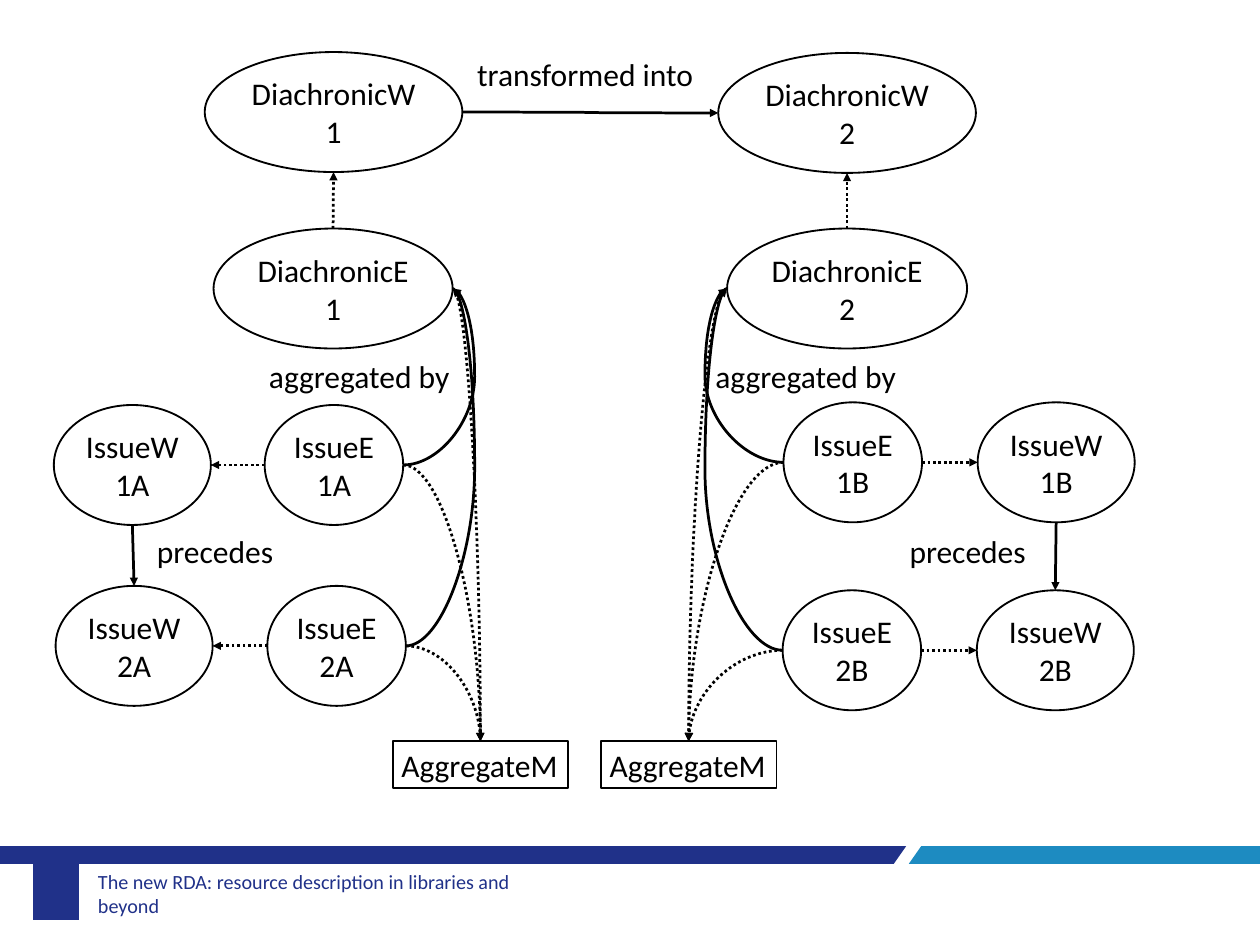
"""Build the slide relating diachronic works, their issues and aggregates."""
import dataclasses
import typing

import lxml.etree
import pptx
import pptx.dml.color
import pptx.enum.dml
import pptx.enum.shapes
import pptx.enum.text
import pptx.oxml.ns
import pptx.util

Inches = pptx.util.Inches
Shape = pptx.enum.shapes.MSO_SHAPE
Connector = pptx.enum.shapes.MSO_CONNECTOR
Align = pptx.enum.text.PP_ALIGN
Point = tuple[float, float]

BLACK = pptx.dml.color.RGBColor(0x00, 0x00, 0x00)
NAVY = pptx.dml.color.RGBColor(0x20, 0x31, 0x89)
SKY = pptx.dml.color.RGBColor(0x1D, 0x8B, 0xC1)
FONT = "Calibri"


@dataclasses.dataclass(frozen=True)
class Node:
    text: str
    left: float
    top: float
    width: float
    height: float = 1.36
    form: Shape = Shape.OVAL

    def side(self, across: float, down: float) -> Point:
        return self.left + across * self.width, self.top + down * self.height

    @property
    def west(self) -> Point:
        return self.side(0, 0.5)

    @property
    def east(self) -> Point:
        return self.side(1, 0.5)

    @property
    def north(self) -> Point:
        return self.side(0.5, 0)

    @property
    def south(self) -> Point:
        return self.side(0.5, 1)


@dataclasses.dataclass(frozen=True)
class Arrow:
    start: Point
    end: Point
    dotted: bool = False
    kind: Connector = Connector.CURVE
    corner: bool = False
    bulge: typing.Optional[float] = None


@dataclasses.dataclass(frozen=True)
class Half:
    work: Node
    expression: Node
    issue_works: tuple[Node, Node]
    issue_expressions: tuple[Node, Node]
    aggregate: Node
    bulge: float
    mirrored: bool

    def nodes(self) -> list[Node]:
        return [self.work, self.expression, *self.issue_works, *self.issue_expressions, self.aggregate]

    def arrows(self) -> list[Arrow]:
        inner = self.expression.west if self.mirrored else self.expression.east
        first, second = self.issue_works
        result = [
            Arrow(self.expression.north, self.work.south, dotted=True, kind=Connector.STRAIGHT),
            Arrow(first.south, second.north, kind=Connector.STRAIGHT),
            Arrow(inner, self.aggregate.north, dotted=True, corner=True),
        ]
        for issue, work in zip(self.issue_expressions, self.issue_works):
            near, far, target = issue.east, issue.west, work.east
            if self.mirrored:
                near, far, target = issue.west, issue.east, work.west
            result += [
                Arrow(far, target, dotted=True),
                Arrow(near, inner, bulge=self.bulge),
                Arrow(near, self.aggregate.north, dotted=True, corner=True),
            ]
        return result


LEFT = Half(
    Node("DiachronicW\n1", 2.32, 0.59, 2.92),
    Node("DiachronicE\n1", 2.42, 2.59, 2.71),
    (Node("IssueW\n1A", 0.61, 4.59, 1.78), Node("IssueW\n2A", 0.63, 6.64, 1.78)),
    (Node("IssueE\n1A", 3, 4.59, 1.57), Node("IssueE\n2A", 3.03, 6.64, 1.57)),
    Node("AggregateM", 4.45, 8.4, 1.99, 0.53, Shape.RECTANGLE),
    bulge=5.38,
    mirrored=False,
)
RIGHT = Half(
    Node("DiachronicW\n2", 8.14, 0.6, 2.92),
    Node("DiachronicE\n2", 8.24, 2.59, 2.72),
    (Node("IssueW\n1B", 11.08, 4.56, 1.78), Node("IssueW\n2B", 11.07, 6.69, 1.78)),
    (Node("IssueE\n1B", 8.88, 4.56, 1.57), Node("IssueE\n2B", 8.87, 6.69, 1.57)),
    Node("AggregateM", 6.81, 8.4, 1.99, 0.53, Shape.RECTANGLE),
    bulge=7.99,
    mirrored=True,
)
LABELS = [
    ("transformed into", 5.31, 0.57, 2.69),
    ("precedes", 1.68, 5.98, 1.54),
    ("precedes", 10.21, 5.98, 1.54),
    ("aggregated by", 2.95, 4, 2.28),
    ("aggregated by", 8.01, 4, 2.28),
]
BANDS = [
    (NAVY, [(0, 9.59), (10.27, 9.59), (10.13, 9.79), (0, 9.79)]),
    (SKY, [(10.44, 9.59), (14.28, 9.59), (14.28, 9.79), (10.3, 9.79)]),
    (NAVY, [(0.37, 9.59), (0.89, 9.59), (0.89, 10.43), (0.37, 10.43)]),
]


def write(box, text: str, *, size: float = 25.7, color=BLACK, align=Align.LEFT, wrap: bool = False) -> None:
    frame = box.text_frame
    frame.word_wrap = wrap
    frame.vertical_anchor = pptx.enum.text.MSO_ANCHOR.MIDDLE
    frame.text = text
    for para in frame.paragraphs:
        para.alignment = align
        para.font.size = pptx.util.Pt(size)
        para.font.name = FONT
        para.font.color.rgb = color


def draw_band(page, color, corners: list[Point]) -> None:
    start, *others = [(Inches(x), Inches(y)) for x, y in corners]
    builder = page.shapes.build_freeform(*start)
    builder.add_line_segments(others, close=True)
    band = builder.convert_to_shape()
    band.shadow.inherit = False
    band.fill.solid()
    band.fill.fore_color.rgb = color
    band.line.fill.background()


def draw_node(page, node: Node) -> None:
    place = map(Inches, (node.left, node.top, node.width, node.height))
    shape = page.shapes.add_shape(node.form, *place)
    shape.shadow.inherit = False
    shape.fill.background()
    shape.line.color.rgb = BLACK
    shape.line.width = pptx.util.Pt(1.5)
    write(shape, node.text, align=Align.CENTER if node.form == Shape.OVAL else Align.LEFT)


def draw_arrow(page, arrow: Arrow) -> None:
    qn = pptx.oxml.ns.qn
    connector = page.shapes.add_connector(arrow.kind, *map(Inches, arrow.start + arrow.end))
    line = connector.line
    line.color.rgb = BLACK
    line.width = pptx.util.Pt(2.25)
    if arrow.dotted:
        line.dash_style = pptx.enum.dml.MSO_LINE.ROUND_DOT
    properties = connector._element.spPr
    lxml.etree.SubElement(properties.find(qn("a:ln")), qn("a:tailEnd"), type="triangle")
    lxml.etree.SubElement(properties, qn("a:effectLst"))
    geometry = properties.find(qn("a:prstGeom"))
    if arrow.corner:
        geometry.set("prst", "curvedConnector2")
    if arrow.bulge is not None:
        share = (arrow.bulge - arrow.start[0]) / (arrow.end[0] - arrow.start[0])
        guides = geometry.find(qn("a:avLst"))
        lxml.etree.SubElement(guides, qn("a:gd"), name="adj1", fmla=f"val {round(share * 100000)}")


def main() -> None:
    deck = pptx.Presentation()
    deck.slide_width, deck.slide_height = Inches(14.28), Inches(10.71)
    page = deck.slides.add_slide(deck.slide_layouts[6])
    for color, corners in BANDS:
        draw_band(page, color, corners)
    footer = page.shapes.add_textbox(*map(Inches, (1.04, 9.85, 5.52, 0.55)))
    write(footer, "The new RDA: resource description in libraries and beyond", size=16.4, color=NAVY, wrap=True)
    frame = footer.text_frame
    frame.margin_left = frame.margin_right = Inches(0.07)
    frame.margin_top = frame.margin_bottom = Inches(0.04)
    for node in LEFT.nodes() + RIGHT.nodes():
        draw_node(page, node)
    for arrow in [Arrow(LEFT.work.east, RIGHT.work.west), *LEFT.arrows(), *RIGHT.arrows()]:
        draw_arrow(page, arrow)
    for text, left, top, width in LABELS:
        write(page.shapes.add_textbox(*map(Inches, (left, top, width, 0.53))), text)
    deck.save("out.pptx")


if __name__ == "__main__":
    main()
